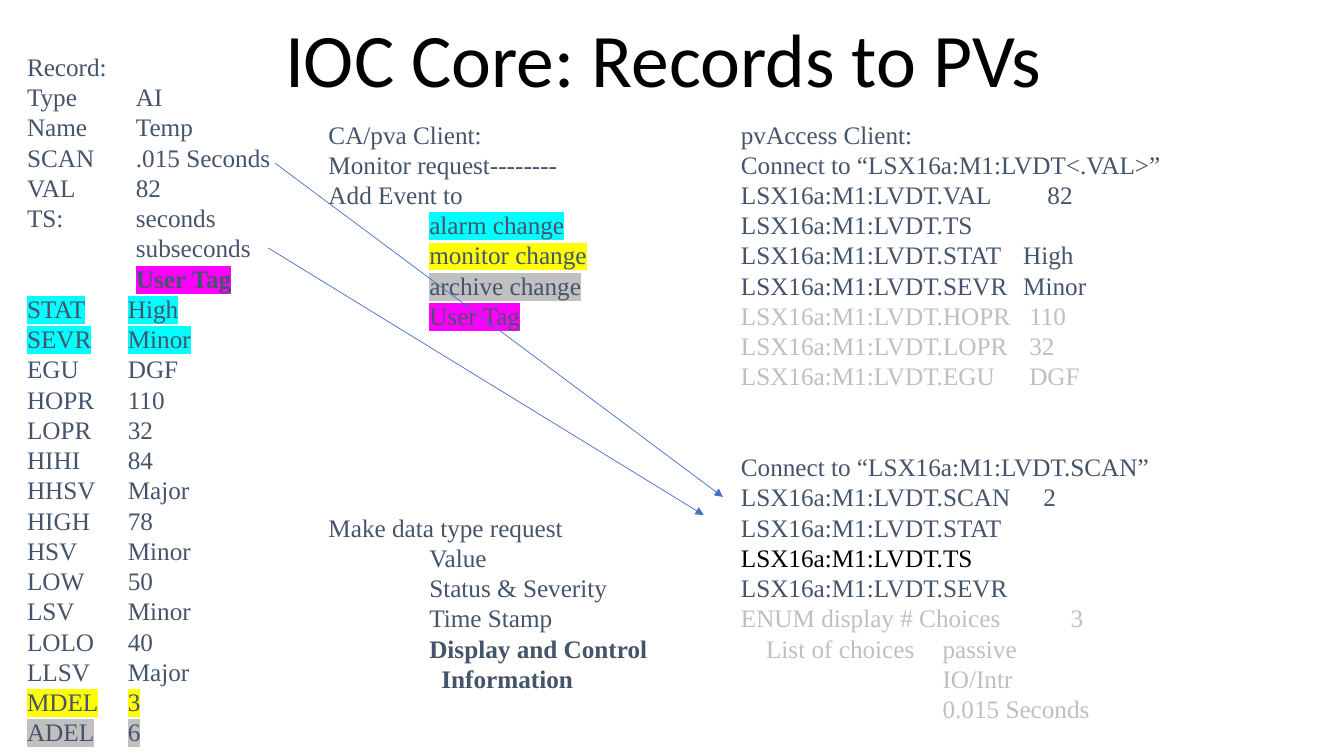
from lxml import etree
from pptx import Presentation
from pptx.dml.color import RGBColor
from pptx.enum import shapes, text
from pptx.oxml.ns import qn
from pptx.util import Inches, Pt

COLORS = {"slate": "44546A", "black": "000000", "pale": "BFBFBF", "line": "4472C4",
          "cyan": "00FFFF", "yellow": "FFFF00", "silver": "C0C0C0", "magenta": "FF00FF"}
SIZE, LINE = 18, 21.6  # points

prs = Presentation()
prs.slide_width, prs.slide_height = Inches(13.33), Inches(7.5)
s = prs.slides.add_slide(prs.slide_layouts[5])

# Title
title = s.shapes.title
title.left, title.top, title.width, title.height = (Inches(v) for v in (2.33, 0, 8.5, 1.25))
tf = title.text_frame
tf.text = "IOC Core: Records to PVs"
tf.auto_size = text.MSO_AUTO_SIZE.NONE
tf.vertical_anchor = text.MSO_ANCHOR.MIDDLE
p = tf.paragraphs[0]
p.alignment, p.line_spacing = text.PP_ALIGN.CENTER, 0.9
font = p.runs[0].font
font.name, font.size = "Calibri", Pt(54)
font.color.rgb = RGBColor.from_string(COLORS["black"])

# Columns: box, then groups of (tab stops in inches, format, lines)
record = [
    ([1.08], {}, ["Record:", "Type\tAI", "Name\tTemp", "SCAN\t.015 Seconds",
                  "VAL\t82", "TS:\tseconds", "\tsubseconds"]),
    ([1.08], {"mark": "magenta", "bold": True}, ["\tUser Tag"]),
    ([1], {"mark": "cyan"}, ["STAT\tHigh", "SEVR\tMinor"]),
    ([1], {}, ["EGU\tDGF", "HOPR\t110", "LOPR\t32", "HIHI\t84", "HHSV\tMajor",
               "HIGH\t78", "HSV\tMinor", "LOW\t50", "LSV\tMinor", "LOLO\t40",
               "LLSV\tMajor"]),
    ([1], {"mark": "yellow"}, ["MDEL\t3"]),
    ([1], {"mark": "silver"}, ["ADEL\t6"]),
]
monitor = [
    ([], {}, ["CA/pva Client:", "Monitor request--------", "Add Event to"]),
    ([1], {"mark": "cyan"}, ["\talarm change"]),
    ([1], {"mark": "yellow"}, ["\tmonitor change"]),
    ([1], {"mark": "silver"}, ["\tarchive change"]),
    ([1], {"mark": "magenta"}, ["\tUser Tag"]),
    ([], {"skip": 6}, ["Make data type request"]),
    ([1], {}, ["\tValue", "\tStatus & Severity", "\tTime Stamp"]),
    ([1], {"bold": True}, ["\tDisplay and Control"]),
    ([1.12], {"bold": True}, ["\tInformation"]),
]
client = [
    ([3.04], {}, ["pvAccess Client:", "Connect to “LSX16a:M1:LVDT<.VAL>”",
                  "LSX16a:M1:LVDT.VAL\t82", "LSX16a:M1:LVDT.TS"]),
    ([2.8], {}, ["LSX16a:M1:LVDT.STAT\tHigh", "LSX16a:M1:LVDT.SEVR\tMinor"]),
    ([2.86], {"color": "pale"}, ["LSX16a:M1:LVDT.HOPR\t110", "LSX16a:M1:LVDT.LOPR\t32",
                                 "LSX16a:M1:LVDT.EGU\tDGF"]),
    ([], {"skip": 2}, ["Connect to “LSX16a:M1:LVDT.SCAN”"]),
    ([3], {}, ["LSX16a:M1:LVDT.SCAN\t2", "LSX16a:M1:LVDT.STAT"]),
    ([], {"color": "black"}, ["LSX16a:M1:LVDT.TS"]),
    ([], {}, ["LSX16a:M1:LVDT.SEVR"]),
    ([3.27], {"color": "pale"}, ["ENUM display # Choices\t3"]),
    ([0.25, 2], {"color": "pale"}, ["\tList of choices\tpassive"]),
    ([2], {"color": "pale"}, ["\tIO/Intr", "\t0.015 Seconds"]),
]
columns = [((0.17, 0.46, 2.67, 7.07), record),
           ((3.16, 1.13, 3.5, 6.16), monitor),
           ((7.25, 1.13, 5.98, 6.46), client)]

for box, groups in columns:
    tf = s.shapes.add_textbox(*(Inches(v) for v in box)).text_frame
    tf.word_wrap = True
    rows = [(stops, style, line) for stops, style, lines in groups for line in lines]
    for i, (stops, style, line) in enumerate(rows):
        p = tf.add_paragraph() if i else tf.paragraphs[0]
        p.text = line
        p.line_spacing = Pt(LINE)
        if "skip" in style:
            p.space_before = Pt(style["skip"] * LINE)
        if stops:
            tabs = etree.SubElement(p._p.get_or_add_pPr(), qn("a:tabLst"))
            for stop in stops:
                etree.SubElement(tabs, qn("a:tab"), pos=str(Inches(stop)), algn="l")
        r = p.runs[0]
        r.font.size, r.font.bold = Pt(SIZE), style.get("bold", False)
        r.font.color.rgb = RGBColor.from_string(COLORS[style.get("color", "slate")])
        if "mark" in style:
            mark = etree.SubElement(r._r.get_or_add_rPr(), qn("a:highlight"))
            etree.SubElement(mark, qn("a:srgbClr"), val=COLORS[style["mark"]])
        r.font.name = "Times New Roman"

# Arrows from the record to the client
for ends in [(2.73, 1.62, 7.17, 4.93), (2.66, 2.46, 6.98, 5.11)]:
    arrow = s.shapes.add_connector(shapes.MSO_CONNECTOR.STRAIGHT, *(Inches(v) for v in ends))
    arrow.line.width = Pt(0.5)
    arrow.line.color.rgb = RGBColor.from_string(COLORS["line"])
    etree.SubElement(arrow.line._get_or_add_ln(), qn("a:tailEnd"), type="triangle")
    etree.SubElement(arrow._element.spPr, qn("a:effectLst"))

prs.save("out.pptx")
